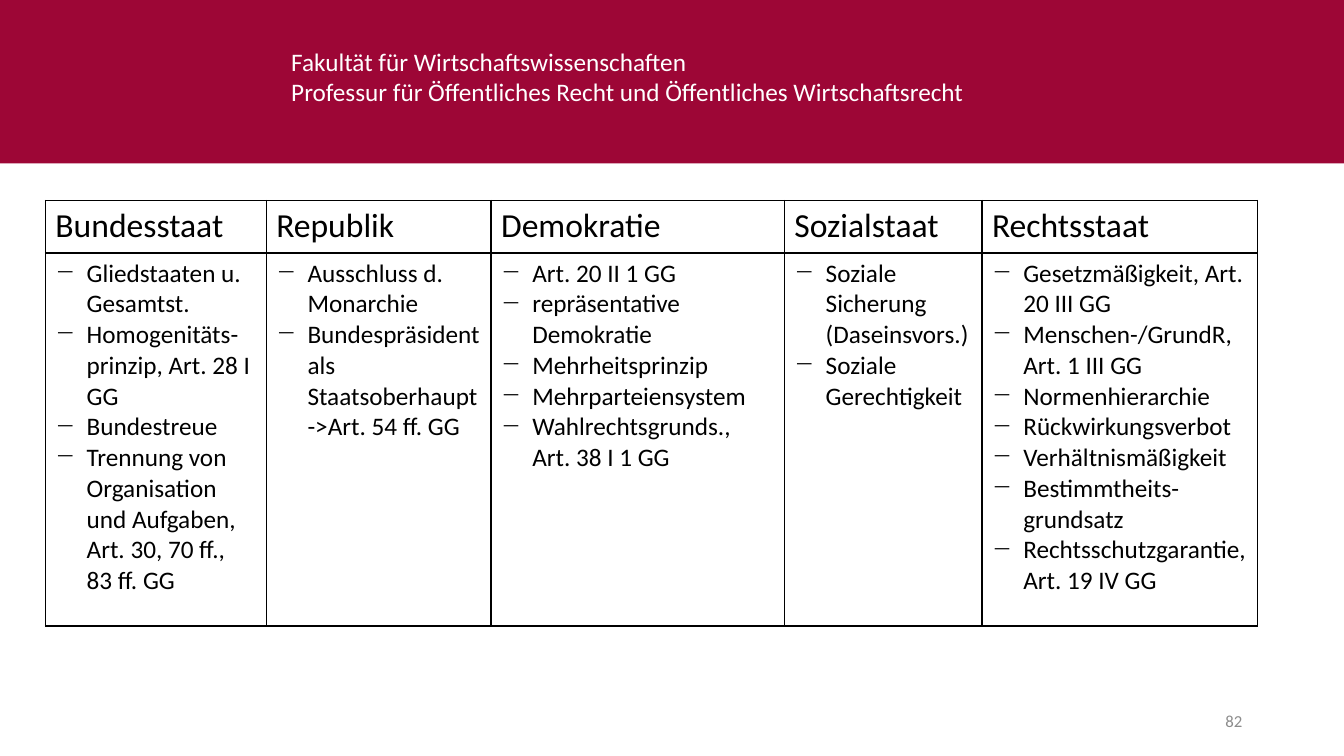
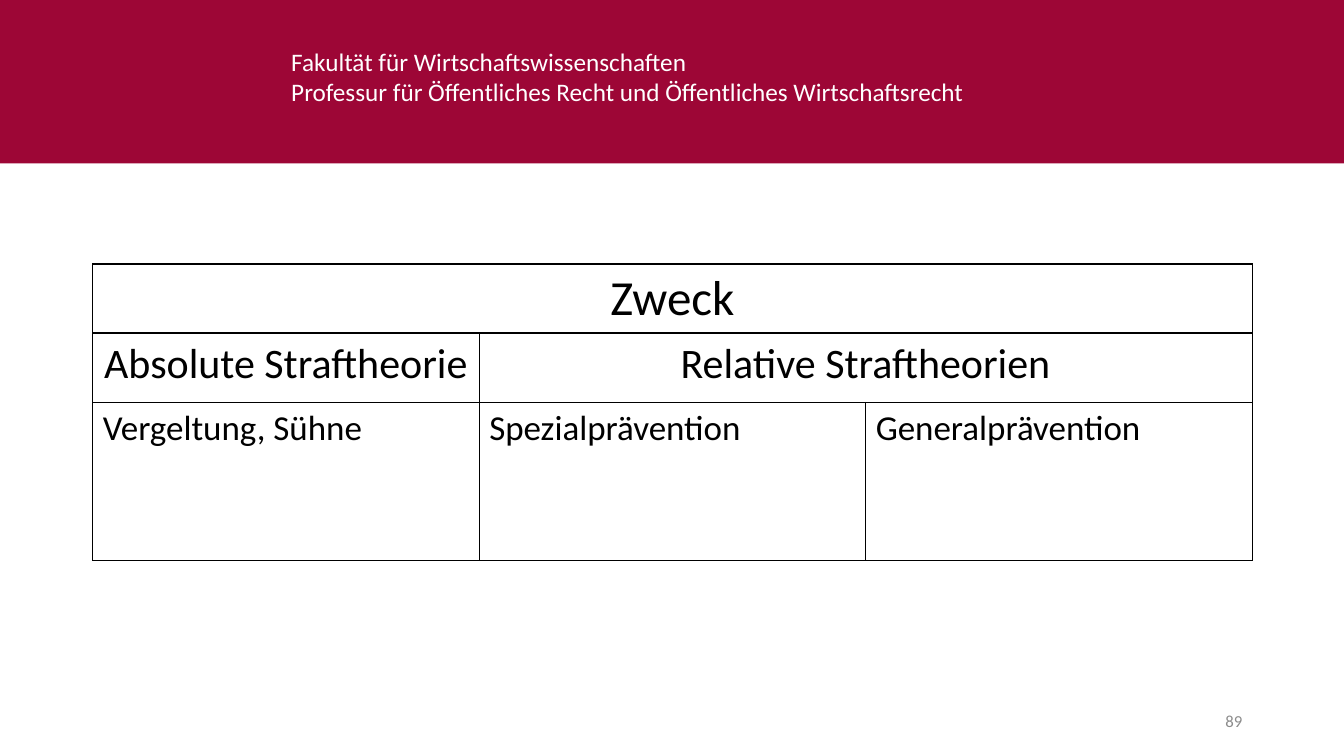
from lxml import etree
from pptx import Presentation, util as u
from pptx.dml.color import RGBColor
from pptx.enum import shapes, text
from pptx.oxml.ns import qn

WIDTH, HEIGHT = u.Inches(13.33), u.Inches(7.5)
FONT = "Calibri"
RED, WHITE, BLACK, GREY = "9D0636", "FFFFFF", "000000", "8C8C8C"
LEFT, CENTER, RIGHT = text.PP_ALIGN.LEFT, text.PP_ALIGN.CENTER, text.PP_ALIGN.RIGHT
HEADER = ["Fakultät für Wirtschaftswissenschaften",
          "Professur für Öffentliches Recht und Öffentliches Wirtschaftsrecht"]

PRINCIPLES = {
    "Bundesstaat": ["Gliedstaaten u. Gesamtst.", "Homogenitäts-prinzip, Art. 28 I GG",
                    "Bundestreue",
                    "Trennung von Organisation und Aufgaben, Art. 30, 70 ff., 83 ff. GG"],
    "Republik": ["Ausschluss d. Monarchie",
                 "Bundespräsident als Staatsoberhaupt->Art. 54 ff. GG"],
    "Demokratie": ["Art. 20 II 1 GG", "repräsentative Demokratie", "Mehrheitsprinzip",
                   "Mehrparteiensystem", "Wahlrechtsgrunds., Art. 38 I 1 GG"],
    "Sozialstaat": ["Soziale Sicherung (Daseinsvors.)", "Soziale Gerechtigkeit"],
    "Rechtsstaat": ["Gesetzmäßigkeit, Art. 20 III GG", "Menschen-/GrundR, Art. 1 III GG",
                    "Normenhierarchie", "Rückwirkungsverbot", "Verhältnismäßigkeit",
                    "Bestimmtheits-grundsatz", "Rechtsschutzgarantie, Art. 19 IV GG"],
}


def rgb(color):
    return RGBColor.from_string(color)


def percent(x, y, w, h):
    return [int(v * side / 100) for v, side in zip((x, y, w, h), (WIDTH, HEIGHT) * 2)]


def add_bullet(p):
    pPr = p._p.get_or_add_pPr()
    indent = u.Inches(0.31)
    pPr.set("marL", str(indent))
    pPr.set("indent", str(-indent))
    etree.SubElement(pPr, qn("a:buChar")).set("char", "−")


def write(tf, lines, size, color, align=LEFT, bullets=False):
    for i, line in enumerate(lines):
        p = tf.add_paragraph() if i else tf.paragraphs[0]
        p.alignment = align
        if bullets:
            add_bullet(p)
        r = p.add_run()
        r.text = line
        r.font.name, r.font.size = FONT, u.Pt(size)
        r.font.color.rgb = rgb(color)


def add_text(s, box, lines, size, color, align=LEFT, anchor=text.MSO_ANCHOR.TOP):
    tf = s.shapes.add_textbox(*box).text_frame
    tf.word_wrap = True
    tf.vertical_anchor = anchor
    write(tf, lines, size, color, align)


def add_borders(cell):
    tcPr = cell._tc.get_or_add_tcPr()
    for i, side in enumerate(("lnL", "lnR", "lnT", "lnB")):
        ln = etree.Element(qn(f"a:{side}"), w=str(u.Pt(1)))
        fill = etree.SubElement(ln, qn("a:solidFill"))
        etree.SubElement(fill, qn("a:srgbClr")).set("val", BLACK)
        tcPr.insert(i, ln)


def add_table(s, box, cols, rows):
    x, y, w, h = box
    tbl = s.shapes.add_table(len(rows), len(cols), x, y, w, h).table
    tbl.first_row = tbl.horz_banding = False
    for col, share in zip(tbl.columns, cols):
        col.width = int(w * share / sum(cols))
    total = sum(row["height"] for row in rows)
    for i, row in enumerate(rows):
        tbl.rows[i].height = int(h * row["height"] / total)
        for cell in tbl.rows[i].cells:
            cell.fill.background()
            add_borders(cell)
        j = 0
        spans = row.get("spans", [1] * len(cols))
        for lines, span in zip(row["cells"], spans):
            cell = tbl.cell(i, j)
            if span > 1:
                cell.merge(tbl.cell(i, j + span - 1))
            write(cell.text_frame, lines, row["size"], BLACK,
                  row.get("align", LEFT), row.get("bullets", False))
            j += span


def add_frame(prs, number):
    s = prs.slides.add_slide(prs.slide_layouts[6])
    band = s.shapes.add_shape(shapes.MSO_SHAPE.RECTANGLE, *percent(0, 0, 100, 21.6))
    band.shadow.inherit = False
    band.fill.solid()
    band.fill.fore_color.rgb = rgb(RED)
    band.line.fill.background()
    add_text(s, percent(20.93, 5.47, 63.1, 9.47), HEADER, 18, WHITE)
    add_text(s, percent(70.67, 92.67, 22.5, 5.33), [str(number)], 12, GREY,
             RIGHT, text.MSO_ANCHOR.MIDDLE)
    return s


def principles_slide(prs):
    s = add_frame(prs, 82)
    add_table(s, percent(3.38, 26.53, 90.17, 56.27), [2.19, 2.23, 2.91, 1.96, 2.73], [
        {"height": 0.52, "size": 24, "cells": [[name] for name in PRINCIPLES]},
        {"height": 3.7, "size": 18, "cells": PRINCIPLES.values(), "bullets": True},
    ])


def purpose_slide(prs):
    s = add_frame(prs, 89)
    add_table(s, percent(6.9, 34.93, 86.27, 39.2), [1, 1, 1], [
        {"height": 0.68, "size": 35, "align": CENTER, "spans": [3], "cells": [["Zweck"]]},
        {"height": 0.69, "size": 30, "align": CENTER, "spans": [1, 2],
         "cells": [["Absolute Straftheorie"], ["Relative Straftheorien"]]},
        {"height": 1.57, "size": 25,
         "cells": [["Vergeltung, Sühne"], ["Spezialprävention"], ["Generalprävention"]]},
    ])


def main():
    prs = Presentation()
    prs.slide_width, prs.slide_height = WIDTH, HEIGHT
    principles_slide(prs)
    purpose_slide(prs)
    prs.save("out.pptx")


if __name__ == "__main__":
    main()
